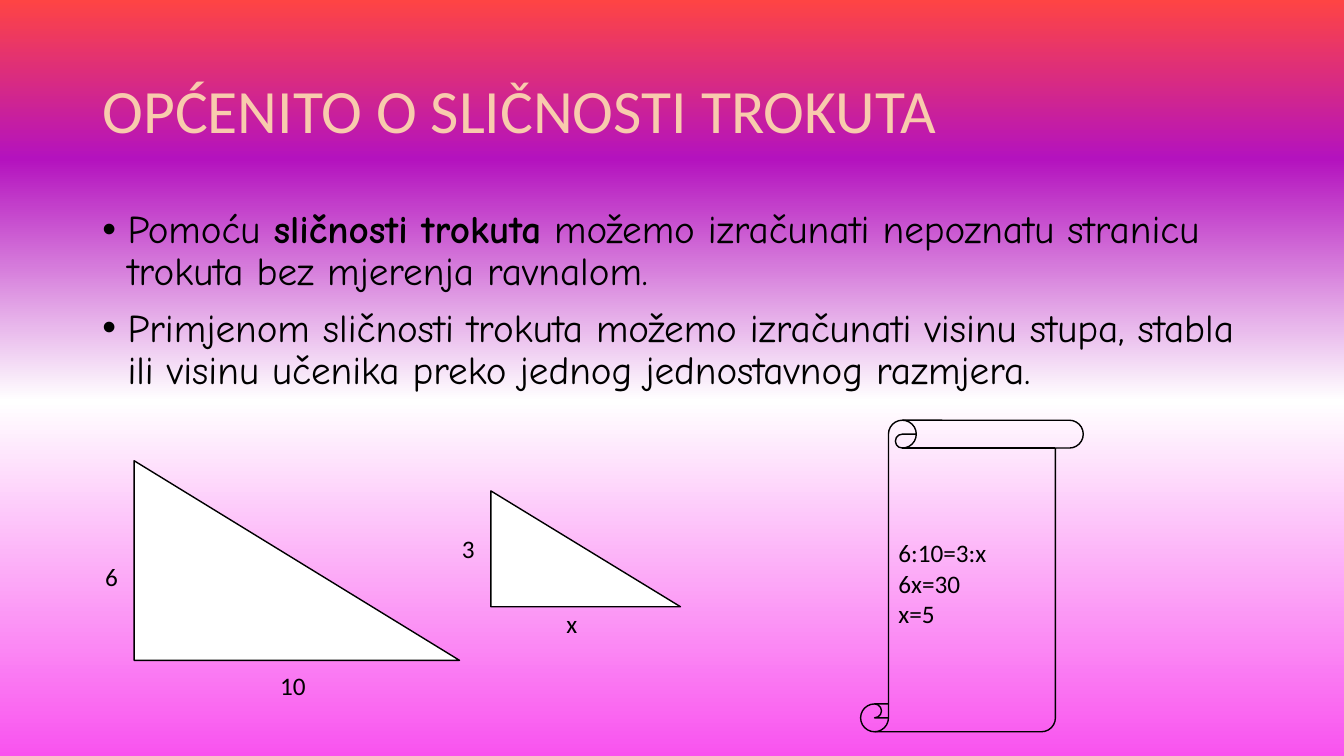
from copy import deepcopy

from lxml import etree
from pptx import Presentation
from pptx.dml.color import RGBColor
from pptx.enum.shapes import MSO_SHAPE as SHAPE
from pptx.enum.text import MSO_ANCHOR as ANCHOR, MSO_AUTO_SIZE as AUTO_SIZE, PP_ALIGN as ALIGN
from pptx.oxml.ns import qn
from pptx.util import Cm, Pt

BLACK = RGBColor(0x00, 0x00, 0x00)
WHITE = RGBColor(0xFF, 0xFF, 0xFF)
PEACH = RGBColor(0xF8, 0xCB, 0xAD)
ORANGE = RGBColor(0xED, 0x7D, 0x31)
BACKGROUND = [
    (0, RGBColor(0xFE, 0x44, 0x44)),
    (0.21, RGBColor(0xB4, 0x12, 0xBE)),
    (0.53, WHITE),
    (1, RGBColor(0xF9, 0x53, 0xEF)),
]


class Deck:
    sans, hand = "Calibri", "Comic Neue"

    def __init__(self):
        self.prs = Presentation()
        self.prs.slide_width, self.prs.slide_height = Cm(33.87), Cm(19.05)
        self.s = self.prs.slides.add_slide(self.prs.slide_layouts[5])

    def background(self, stops):
        fill = self.s.background.fill
        fill.gradient()
        fill.gradient_angle = 270
        gs_list = self.s.element.find(".//" + qn("a:gsLst"))
        while len(gs_list) < len(stops):
            gs_list.append(deepcopy(gs_list[0]))
        for stop, (position, color) in zip(fill.gradient_stops, stops):
            stop.position = position
            stop.color.rgb = color

    def font(self, p, name, size, color=BLACK):
        p.font.name, p.font.size = name, Pt(size)
        p.font.color.rgb = color

    def title(self, text, box):
        sp = self.s.shapes.title
        sp.left, sp.top, sp.width, sp.height = map(Cm, box)
        tf = sp.text_frame
        tf.auto_size, tf.vertical_anchor = AUTO_SIZE.NONE, ANCHOR.MIDDLE
        p = tf.paragraphs[0]
        p.alignment, p.line_spacing = ALIGN.LEFT, 0.9
        r = p.add_run()
        r.text = text
        self.font(r, self.sans, 44, PEACH)
        # Letter outline
        ln = etree.Element(qn("a:ln"), w=str(Pt(1.75)))
        fill = etree.SubElement(ln, qn("a:solidFill"))
        etree.SubElement(fill, qn("a:srgbClr"), val=str(ORANGE))
        r._r.get_or_add_rPr().insert(0, ln)

    def bullets(self, items, box):
        tf = self.s.shapes.add_textbox(*map(Cm, box)).text_frame
        tf.word_wrap = True
        for i, runs in enumerate(items):
            p = tf.add_paragraph() if i else tf.paragraphs[0]
            p.line_spacing, p.space_before = 0.9, Pt(10)
            self.font(p, self.hand, 28)
            pPr = p._p.get_or_add_pPr()
            pPr.set("marL", str(Pt(18)))
            pPr.set("indent", str(-Pt(18)))
            bullet_font = etree.Element(qn("a:buFont"), typeface="Arial")
            bullet = etree.Element(qn("a:buChar"), char="•")
            pPr.find(qn("a:defRPr")).addprevious(bullet_font)
            bullet_font.addnext(bullet)
            for text, bold in runs:
                r = p.add_run()
                r.text, r.font.bold = text, bold

    def shape(self, kind, box, fill=None):
        sp = self.s.shapes.add_shape(kind, *map(Cm, box))
        sp.shadow.inherit = False
        if fill is None:
            sp.fill.background()
        else:
            sp.fill.solid()
            sp.fill.fore_color.rgb = fill
        sp.line.color.rgb, sp.line.width = BLACK, Pt(1)
        return sp

    def lines(self, sp, texts, align):
        tf = sp.text_frame
        tf.word_wrap, tf.vertical_anchor = True, ANCHOR.MIDDLE
        for i, text in enumerate(texts):
            p = tf.add_paragraph() if i else tf.paragraphs[0]
            p.text, p.alignment = text, align
            self.font(p, self.sans, 18)

    def label(self, text, left, top, width=1.14):
        sp = self.s.shapes.add_textbox(Cm(left), Cm(top), Cm(width), Cm(0.84))
        self.lines(sp, [text], ALIGN.CENTER)


def main():
    deck = Deck()
    deck.background(BACKGROUND)

    # Title and explanation
    deck.title("OPĆENITO O SLIČNOSTI TROKUTA", (2.33, 1.02, 29.21, 3.68))
    deck.bullets([
        [("Pomoću ", False), ("sličnosti trokuta", True),
         (" možemo izračunati nepoznatu stranicu trokuta bez mjerenja ravnalom.", False)],
        [("Primjenom sličnosti trokuta možemo izračunati visinu stupa, stabla "
          "ili visinu učenika preko jednog jednostavnog razmjera.", False)],
    ], (2.33, 5.16, 29.21, 12.93))

    # Similar triangles
    for box in [(3.38, 11.61, 8.2, 5.03), (12.37, 12.37, 4.78, 2.92)]:
        deck.shape(SHAPE.RIGHT_TRIANGLE, box, WHITE)

    # Side lengths
    deck.label("10", 6.65, 16.84, 1.47)
    deck.label("3", 11.23, 13.41)
    deck.label("6", 2.24, 14.1)
    deck.label("x", 13.84, 15.29)

    # Calculation on a scroll
    scroll = deck.shape(SHAPE.VERTICAL_SCROLL, (21.69, 10.59, 5.61, 7.85))
    deck.lines(scroll, ["6:10=3:x", "6x=30", "x=5"], ALIGN.LEFT)

    deck.prs.save("out.pptx")


if __name__ == "__main__":
    main()
